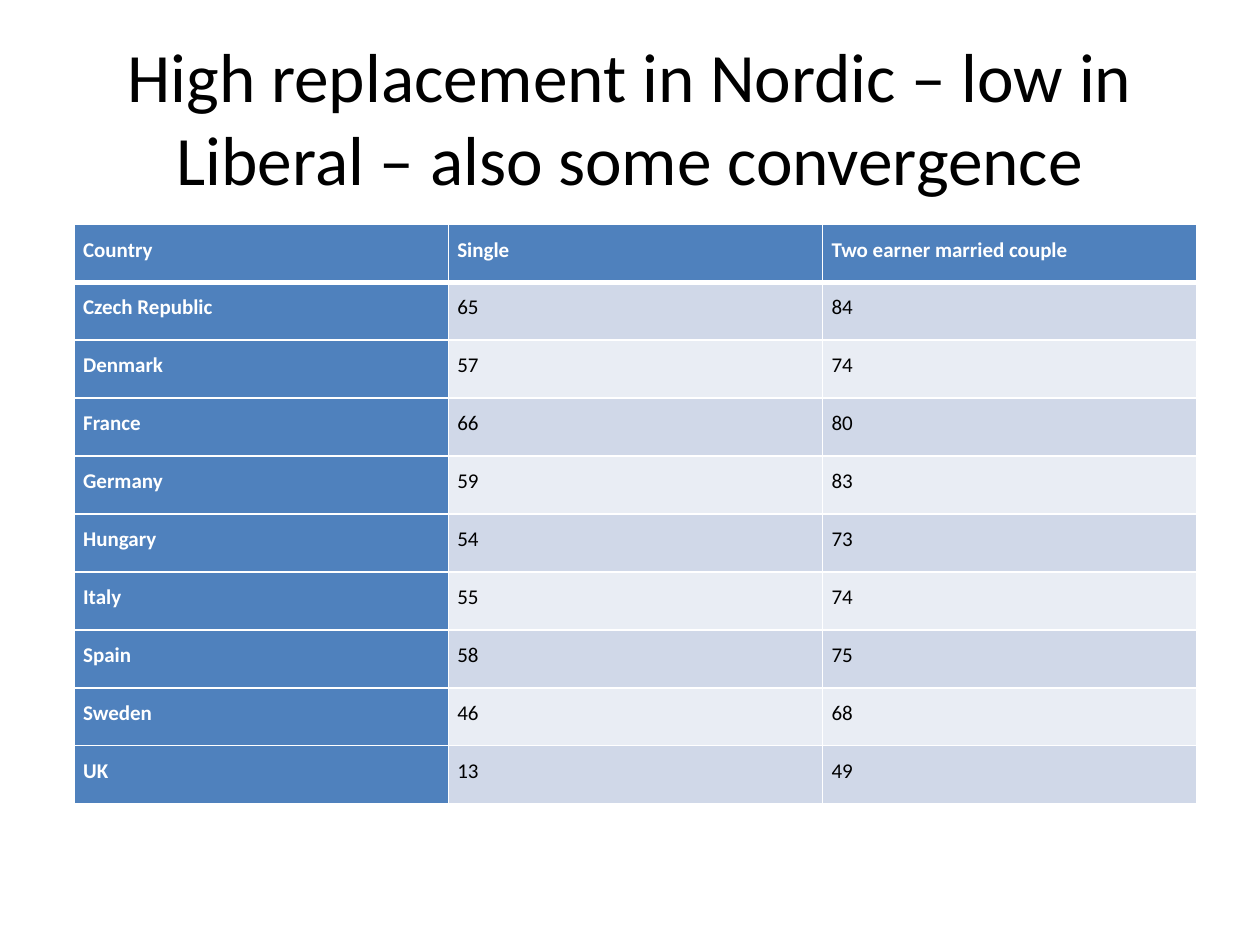
from dataclasses import dataclass

from lxml import etree
from pptx import Presentation
from pptx import util as u
from pptx.dml.color import RGBColor
from pptx.enum import text
from pptx.oxml.ns import qn


@dataclass(frozen=True)
class Theme:
    font: str = "Calibri"
    title_size: float = 39.6
    cell_size: float = 12
    dark: str = "000000"
    light: str = "FFFFFF"
    accent: str = "4F81BD"
    bands: tuple[str, str] = ("D0D8E8", "E9EDF4")
    rule: float = 1
    header_rule: float = 3


@dataclass(frozen=True)
class Replacement:
    country: str
    single: int
    couple: int


THEME = Theme()
WIDTH, HEIGHT = u.Inches(10), u.Inches(7.5)
TITLE_BOX = (0.05, 0.04, 0.9, 1 / 6)  # shares of the slide
TABLE_LEFT, TABLE_TOP = u.Inches(0.59), u.Inches(1.78)
COLUMN, ROW = u.Inches(2.97), u.Inches(0.46)

TITLE = "High replacement in Nordic – low in Liberal – also some convergence"
HEADINGS = ("Country", "Single", "Two earner married couple")
RATES = (
    Replacement("Czech Republic", 65, 84),
    Replacement("Denmark", 57, 74),
    Replacement("France", 66, 80),
    Replacement("Germany", 59, 83),
    Replacement("Hungary", 54, 73),
    Replacement("Italy", 55, 74),
    Replacement("Spain", 58, 75),
    Replacement("Sweden", 46, 68),
    Replacement("UK", 13, 49),
)


def add_run(p, words: str, size: float, color: str, bold: bool = False) -> None:
    r = p.add_run()
    r.text = words
    r.font.name = THEME.font
    r.font.size = u.Pt(size)
    r.font.bold = bold
    r.font.color.rgb = RGBColor.from_string(color)


def add_title(slide) -> None:
    sp = slide.shapes.title
    x, y, w, h = TITLE_BOX
    sp.left, sp.width = int(x * WIDTH), int(w * WIDTH)
    sp.top, sp.height = int(y * HEIGHT), int(h * HEIGHT)
    tf = sp.text_frame
    tf.word_wrap = True
    tf.auto_size = text.MSO_AUTO_SIZE.NONE
    tf.vertical_anchor = text.MSO_ANCHOR.MIDDLE
    p = tf.paragraphs[0]
    p.alignment = text.PP_ALIGN.CENTER
    add_run(p, TITLE, THEME.title_size, THEME.dark)


def set_borders(cell, top: float, bottom: float) -> None:
    """Rule the four sides; call before the fill, which must follow in the XML."""
    tc_pr = cell._tc.get_or_add_tcPr()
    widths = {"L": THEME.rule, "R": THEME.rule, "T": top, "B": bottom}
    for side, width in widths.items():
        ln = etree.SubElement(tc_pr, qn(f"a:ln{side}"), w=str(u.Pt(width)))
        fill = etree.SubElement(ln, qn("a:solidFill"))
        etree.SubElement(fill, qn("a:srgbClr"), val=THEME.light)


def format_cell(cell, words: str, row: int, col: int) -> None:
    heading = row == 0 or col == 0
    set_borders(
        cell,
        top=THEME.header_rule if row == 1 else THEME.rule,
        bottom=THEME.header_rule if row == 0 else THEME.rule,
    )
    cell.fill.solid()
    color = THEME.accent if heading else THEME.bands[(row - 1) % 2]
    cell.fill.fore_color.rgb = RGBColor.from_string(color)
    cell.margin_left = cell.margin_right = u.Inches(0.07)
    cell.margin_top = cell.margin_bottom = 0
    p = cell.text_frame.paragraphs[0]
    p.alignment = text.PP_ALIGN.JUSTIFY
    p.line_spacing = 1.5
    add_run(p, words, THEME.cell_size, THEME.light if heading else THEME.dark, heading)


def add_rates_table(slide) -> None:
    rows = [HEADINGS] + [(x.country, str(x.single), str(x.couple)) for x in RATES]
    n_rows, n_cols = len(rows), len(HEADINGS)
    table = slide.shapes.add_table(
        n_rows, n_cols, TABLE_LEFT, TABLE_TOP, COLUMN * n_cols, ROW * n_rows
    ).table
    table.first_col = True
    for i, row in enumerate(rows):
        for j, words in enumerate(row):
            format_cell(table.cell(i, j), words, i, j)


def main() -> None:
    prs = Presentation()
    prs.slide_width, prs.slide_height = WIDTH, HEIGHT
    slide = prs.slides.add_slide(prs.slide_layouts.get_by_name("Title Only"))
    add_title(slide)
    add_rates_table(slide)
    prs.save("out.pptx")


if __name__ == "__main__":
    main()
